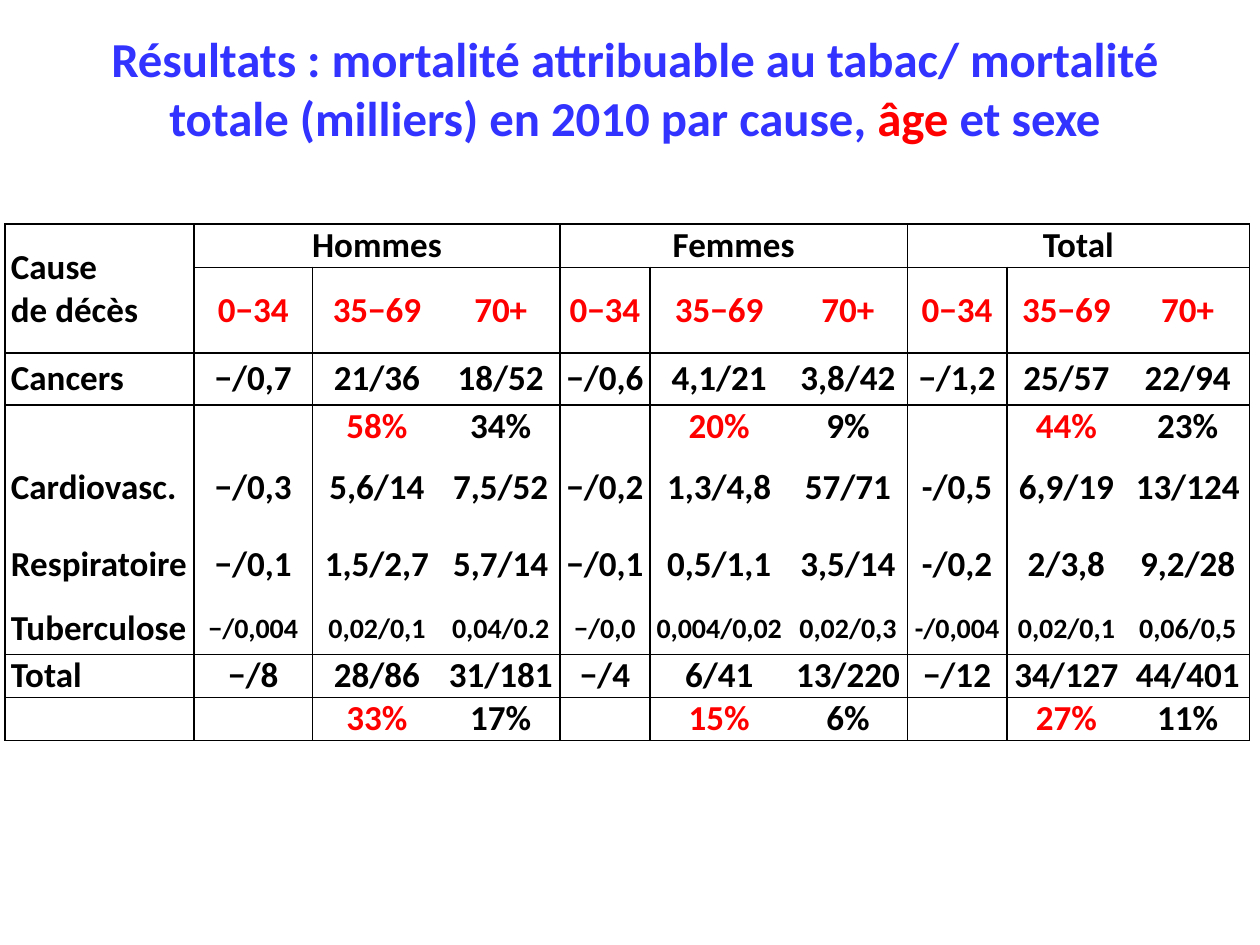
from lxml.etree import SubElement
from pptx import Presentation
from pptx.dml.color import RGBColor
from pptx.enum.text import MSO_ANCHOR, PP_ALIGN
from pptx.oxml.ns import qn
from pptx.util import Cm, Pt

BLUE = RGBColor(0x33, 0x33, 0xFF)
RED = RGBColor(0xFF, 0x00, 0x00)
BLACK = RGBColor(0x00, 0x00, 0x00)


def add_span(para, text, size, color):
    span = para.add_run()
    span.text = text
    span.font.name = "Calibri"
    span.font.size = Pt(size)
    span.font.bold = True
    span.font.color.rgb = color


def set_border(cell, side, visible):
    line = SubElement(cell._tc.get_or_add_tcPr(), qn(f"a:ln{side}"), w=str(Pt(1)))
    if visible:
        fill = SubElement(line, qn("a:solidFill"))
        SubElement(fill, qn("a:srgbClr"), val=str(BLACK))
    else:
        SubElement(line, qn("a:noFill"))


deck = Presentation()
deck.slide_width, deck.slide_height = Cm(25.4), Cm(19.05)
page = deck.slides.add_slide(deck.slide_layouts[6])

# Title
box = page.shapes.add_textbox(Cm(1.37), Cm(0.55), Cm(22.86), Cm(2.44))
box.text_frame.word_wrap = True
box.text_frame.vertical_anchor = MSO_ANCHOR.MIDDLE
para = box.text_frame.paragraphs[0]
para.alignment = PP_ALIGN.CENTER
for text, color in (
    ("Résultats : mortalité attribuable au tabac/ mortalité totale (milliers) "
     "en 2010 par cause, ", BLUE),
    ("âge", RED),
    (" et sexe", BLUE),
):
    add_span(para, text, 27.9, color)

# Table contents: cause, then three age groups for men, women and total
AGES = ["0−34", "35−69", "70+"]
ROWS = [
    ["Cause \nde décès", "Hommes", "", "", "Femmes", "", "", "Total", "", ""],
    [""] + AGES * 3,
    ["Cancers", "−/0,7", "21/36", "18/52", "−/0,6", "4,1/21", "3,8/42",
     "−/1,2", "25/57", "22/94"],
    ["", "", "58%", "34%", "", "20%", "9%", "", "44%", "23%"],
    ["Cardiovasc.", "−/0,3", "5,6/14", "7,5/52", "−/0,2", "1,3/4,8", "57/71",
     "-/0,5", "6,9/19", "13/124"],
    ["Respiratoire", "−/0,1", "1,5/2,7", "5,7/14", "−/0,1", "0,5/1,1", "3,5/14",
     "-/0,2", "2/3,8", "9,2/28"],
    ["Tuberculose", "−/0,004", "0,02/0,1", "0,04/0.2", "−/0,0", "0,004/0,02",
     "0,02/0,3", "-/0,004", "0,02/0,1", "0,06/0,5"],
    ["Total", "−/8", "28/86", "31/181", "−/4", "6/41", "13/220",
     "−/12", "34/127", "44/401"],
    ["", "", "33%", "17%", "", "15%", "6%", "", "27%", "11%"],
]
WIDTHS = [3.81, 2.39, 2.6, 2.39, 1.81, 2.8, 2.39, 2.01, 2.4, 2.49]
HEIGHTS = [0.87, 1.73, 1.04, 0.89, 1.55, 1.55, 1.04, 0.87, 0.87]
AGE_ROW, SMALL_ROW, PERCENT_ROWS = 1, 6, (3, 8)
MIDDLE_AGE_COLUMNS = (2, 5, 8)

# Grid edges that carry a line
ROW_LINES = {0, 1, 2, 3, 7, 8, 9}
GROUP_LINES = {0, 1, 4, 7, 10}
AGE_LINES = {2, 5, 8}

frame = page.shapes.add_table(len(ROWS), len(WIDTHS), Cm(0.1), Cm(4.52),
                              Cm(sum(WIDTHS)), Cm(sum(HEIGHTS)))
table = frame.table
table.first_row = False
table.horz_banding = False
for column, width in zip(table.columns, WIDTHS):
    column.width = Cm(width)
for row, height in zip(table.rows, HEIGHTS):
    row.height = Cm(height)

# Merged headings
table.cell(0, 0).merge(table.cell(1, 0))
for first in (1, 4, 7):
    table.cell(0, first).merge(table.cell(0, first + 2))

# Cell text, borders and fill
for r, texts in enumerate(ROWS):
    column_lines = GROUP_LINES | AGE_LINES if r >= AGE_ROW else GROUP_LINES
    for c, text in enumerate(texts):
        cell = table.cell(r, c)
        cell.margin_left = cell.margin_right = Cm(0.12)
        cell.margin_top = cell.margin_bottom = 0
        cell.vertical_anchor = MSO_ANCHOR.MIDDLE

        red = r == AGE_ROW or (r in PERCENT_ROWS and c in MIDDLE_AGE_COLUMNS)
        size = 16 if r == SMALL_ROW and c > 0 else 20
        para = cell.text_frame.paragraphs[0]
        para.alignment = PP_ALIGN.CENTER if c > 0 else PP_ALIGN.LEFT
        for number, part in enumerate(text.split("\n") if text else []):
            if number:
                para.add_line_break()
            add_span(para, part, size, RED if red else BLACK)

        right = c + (cell.span_width if cell.is_merge_origin else 1)
        bottom = r + (cell.span_height if cell.is_merge_origin else 1)
        set_border(cell, "L", c in column_lines)
        set_border(cell, "R", right in column_lines)
        set_border(cell, "T", r in ROW_LINES and (r, c) != (1, 0))
        set_border(cell, "B", bottom in ROW_LINES)
        cell.fill.background()

deck.save("out.pptx")
